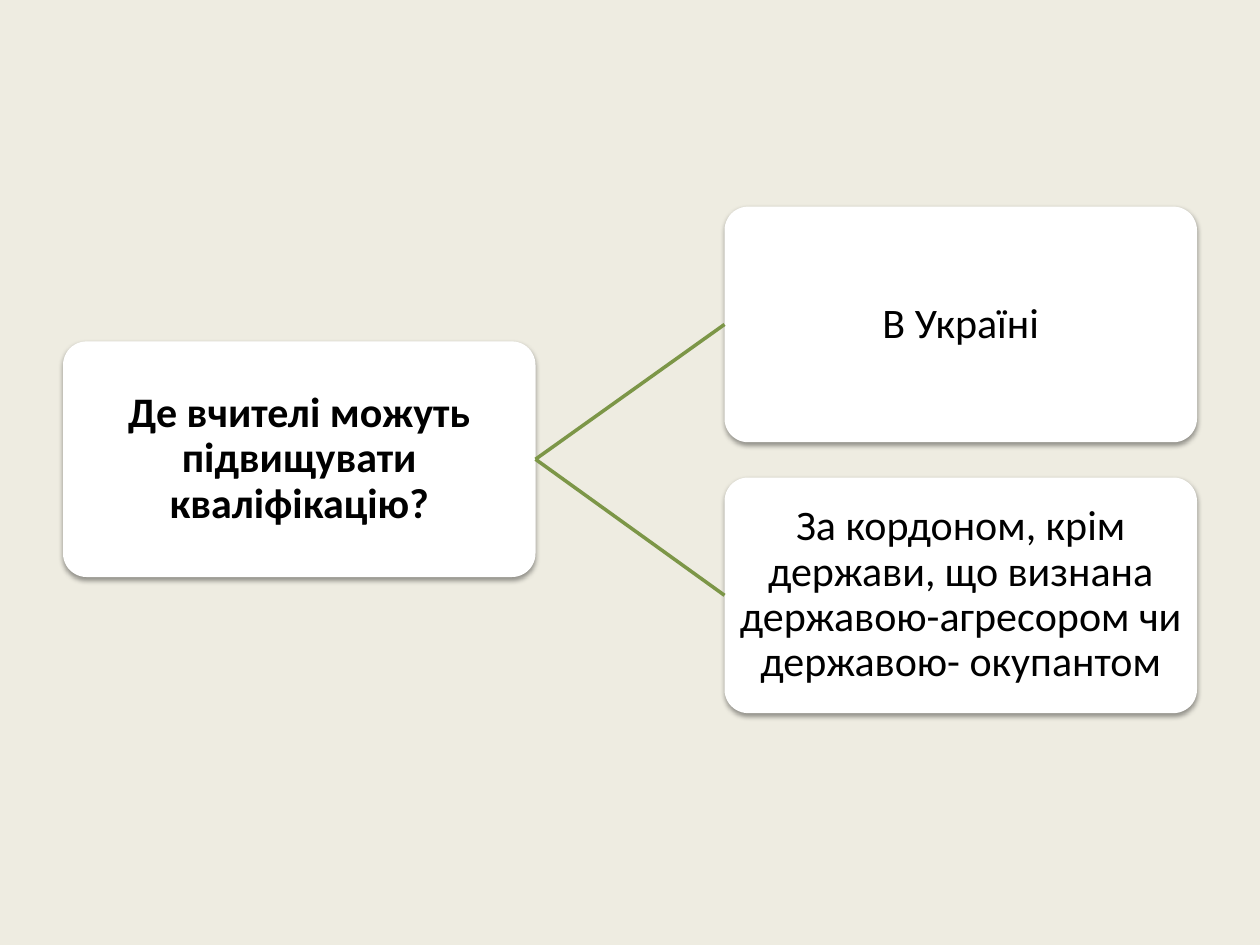
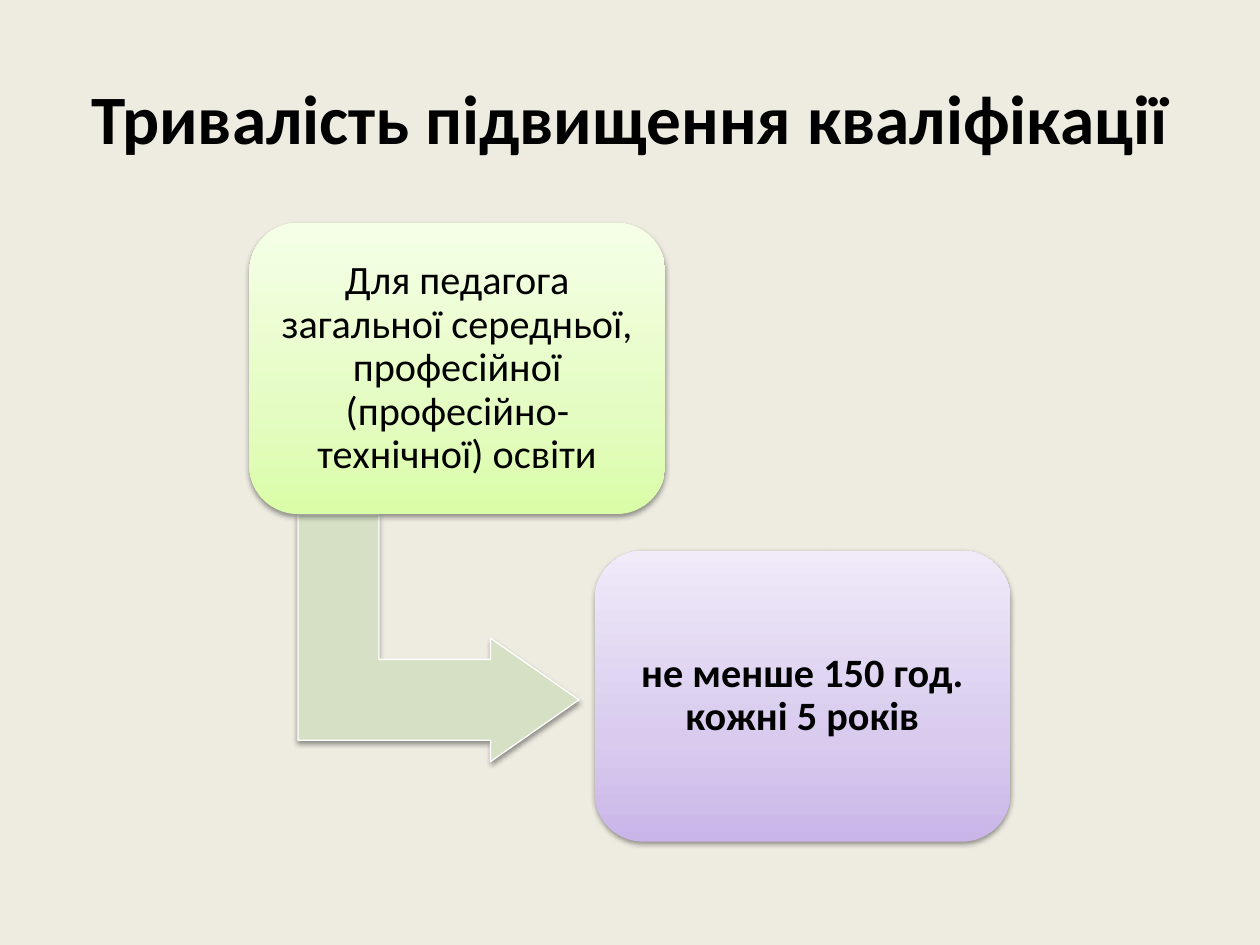
"""Build two slides on where and how long teachers train."""
from copy import deepcopy
from dataclasses import dataclass

from lxml.etree import SubElement
from pptx import Presentation
from pptx.dml.color import RGBColor
from pptx.enum.shapes import MSO_CONNECTOR, MSO_SHAPE
from pptx.enum.text import MSO_ANCHOR, PP_ALIGN
from pptx.oxml.ns import qn
from pptx.shapes.autoshape import Shape
from pptx.slide import Slide
from pptx.text.text import TextFrame
from pptx.util import Inches, Pt

FONT = "Calibri"
COLORS = {
    "back": "EEECE1",
    "text": "000000",
    "card": "FFFFFF",
    "link": "7C9647",
    "arrow": "D5E0C4",
    "edge": "FFFFFF",
    "shade": "000000",
}
FADES = {
    "green": ("DAFDA7", "E4FCC2", "F5FFE7"),
    "violet": ("C9B5E8", "D8CBEE", "F0EAF9"),
}
STOPS = (0, 0.35, 1)


@dataclass(frozen=True)
class Style:
    width: float
    height: float
    round: float
    inset: float
    size: float


@dataclass(frozen=True)
class Card:
    left: float
    top: float
    text: str
    style: Style
    bold: bool = False
    fade: str = ""


TREE = Style(3.75, 1.87, 0.1, 0.02, 24)
STEP = Style(3.3, 2.31, 0.167, 0.1, 23)

ROOT = Card(0.5, 2.71, "Де вчителі можуть підвищувати кваліфікацію?", TREE, bold=True)
LEAVES = (
    "В Україні",
    "За кордоном, крім держави, що визнана державою-агресором чи державою- окупантом",
)
LEAF_LEFT, LEAF_TOP, LEAF_PITCH = 5.75, 1.64, 2.15
STEPS = (
    Card(1.98, 1.77, "Для педагога загальної середньої, професійної (професійно-технічної) освіти",
         STEP, fade="green"),
    Card(4.72, 4.37, "не менше 150 год. кожні 5 років", STEP, bold=True, fade="violet"),
)


def color(name: str) -> RGBColor:
    """Look up a named colour."""
    return RGBColor.from_string(COLORS[name])


def add_slide(deck: Presentation) -> Slide:
    """Add a blank slide with the shared background."""
    slide = deck.slides.add_slide(deck.slide_layouts[6])
    slide.background.fill.solid()
    slide.background.fill.fore_color.rgb = color("back")
    return slide


def write(frame: TextFrame, text: str, size: float, bold: bool, inset: float,
          space: float) -> None:
    """Write one centred run into a frame."""
    frame.word_wrap = True
    frame.vertical_anchor = MSO_ANCHOR.MIDDLE
    frame.margin_left = frame.margin_right = Inches(inset)
    frame.margin_top = frame.margin_bottom = Inches(inset)
    para = frame.paragraphs[0]
    para.alignment = PP_ALIGN.CENTER
    para.line_spacing = space
    run = para.add_run()
    run.text = text
    run.font.name = FONT
    run.font.size = Pt(size)
    run.font.bold = bold
    run.font.color.rgb = color("text")


def add_shade(shape: Shape) -> None:
    """Give a shape the soft shadow below it."""
    shape.shadow.inherit = False
    effects = shape.element.spPr.find(qn("a:effectLst"))
    shade = SubElement(effects, qn("a:outerShdw"), blurRad=str(Pt(3.1)),
                       dist=str(Pt(1.6)), dir="5400000", rotWithShape="0")
    tint = SubElement(shade, qn("a:srgbClr"), val=COLORS["shade"])
    SubElement(tint, qn("a:alpha"), val="38000")


def fill_fade(shape: Shape, name: str) -> None:
    """Fill a shape with a three-stop fade, rising from the bottom."""
    shape.fill.gradient()
    shape.fill.gradient_angle = 90
    stops = shape.element.spPr.find(".//" + qn("a:gsLst"))
    stops.append(deepcopy(stops[-1]))
    for stop, place, tint in zip(shape.fill.gradient_stops, STOPS, FADES[name]):
        stop.position = place
        stop.color.rgb = RGBColor.from_string(tint)


def add_card(slide: Slide, card: Card) -> Shape:
    """Draw a rounded card with its text."""
    style = card.style
    shape = slide.shapes.add_shape(
        MSO_SHAPE.ROUNDED_RECTANGLE, Inches(card.left), Inches(card.top),
        Inches(style.width), Inches(style.height))
    shape.adjustments[0] = style.round
    if card.fade:
        fill_fade(shape, card.fade)
    else:
        shape.fill.solid()
        shape.fill.fore_color.rgb = color("card")
    shape.line.fill.background()
    add_shade(shape)
    write(shape.text_frame, card.text, style.size, card.bold, style.inset, 0.9)
    return shape


def add_link(slide: Slide, start: Shape, end: Shape) -> None:
    """Join the right side of one card to the left side of another."""
    link = slide.shapes.add_connector(MSO_CONNECTOR.STRAIGHT, 0, 0, 0, 0)
    link.begin_connect(start, 3)
    link.end_connect(end, 1)
    link.line.color.rgb = color("link")
    link.line.width = Pt(2)
    SubElement(link.element.spPr, qn("a:effectLst"))


def add_arrow(slide: Slide) -> None:
    """Draw the bent arrow between the two steps."""
    arrow = slide.shapes.add_shape(
        MSO_SHAPE.BENT_UP_ARROW, Inches(2.5), Inches(3.95), Inches(1.96), Inches(2.23))
    arrow.rotation = 90
    for index, value in enumerate((0.328, 0.25, 0.358)):
        arrow.adjustments[index] = value
    arrow.fill.solid()
    arrow.fill.fore_color.rgb = color("arrow")
    arrow.line.color.rgb = color("edge")
    arrow.line.width = Pt(0.75)
    add_shade(arrow)


def add_title(slide: Slide, text: str) -> None:
    """Add the slide title."""
    box = slide.shapes.add_textbox(Inches(0.5), Inches(0.3), Inches(9), Inches(1.25))
    write(box.text_frame, text, 39.6, True, 0.1, 1.0)


def draw_places(deck: Presentation) -> None:
    """Draw the tree of places to train."""
    slide = add_slide(deck)
    root = add_card(slide, ROOT)
    for row, text in enumerate(LEAVES):
        leaf = add_card(slide, Card(LEAF_LEFT, LEAF_TOP + row * LEAF_PITCH, text, TREE))
        add_link(slide, root, leaf)


def draw_length(deck: Presentation) -> None:
    """Draw the steps that give the length of training."""
    slide = add_slide(deck)
    add_title(slide, "Тривалість підвищення кваліфікації")
    add_arrow(slide)
    for card in STEPS:
        add_card(slide, card)


def main() -> None:
    """Build and save the deck."""
    deck = Presentation()
    deck.slide_width = Inches(10)
    deck.slide_height = Inches(7.5)
    draw_places(deck)
    draw_length(deck)
    deck.save("out.pptx")


if __name__ == "__main__":
    main()
